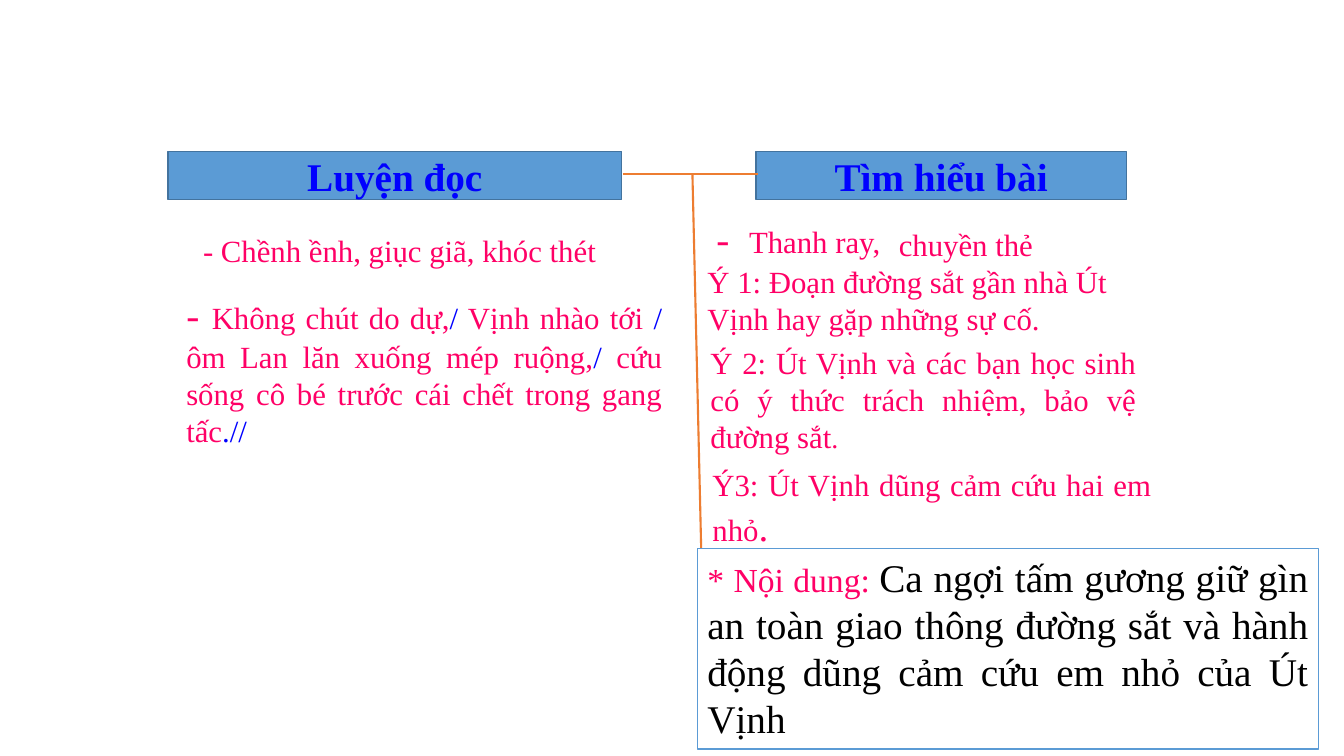
from lxml import etree
from pptx import Presentation
from pptx.dml.color import RGBColor
from pptx.enum.shapes import MSO_CONNECTOR, MSO_SHAPE
from pptx.enum.text import MSO_ANCHOR, MSO_AUTO_SIZE, PP_ALIGN
from pptx.oxml.ns import qn
from pptx.util import Pt

LEFT, CENTER, JUST = PP_ALIGN.LEFT, PP_ALIGN.CENTER, PP_ALIGN.JUSTIFY
TOP, MIDDLE = MSO_ANCHOR.TOP, MSO_ANCHOR.MIDDLE
FIXED = MSO_AUTO_SIZE.NONE
RECT, LINE = MSO_SHAPE.RECTANGLE, MSO_CONNECTOR.STRAIGHT

PINK, BLUE, BLACK, WHITE = "FF0066", "0000FF", "000000", "FFFFFF"
SKY, NAVY, ORANGE = "5B9BD5", "43739E", "ED7D31"


def color(code):
    return RGBColor.from_string(code)


class Board:
    font = "Times New Roman"
    small, large = 22, 28

    def __init__(self, slide):
        self.slide = slide

    def paint(self, shape, fill, edge):
        shape.fill.solid()
        shape.fill.fore_color.rgb = color(fill)
        shape.line.color.rgb = color(edge)
        shape.line.width = Pt(1)

    def style(self, run, size, ink, bold=False):
        run.font.name = self.font
        run.font.size = Pt(size)
        run.font.color.rgb = color(ink)
        run.font.bold = bold

    def label(self, shape, parts, align):
        """Each part is (text, size, ink)."""
        frame = shape.text_frame
        frame.word_wrap = True
        frame.auto_size = FIXED
        frame.vertical_anchor = TOP
        para = frame.paragraphs[0]
        para.alignment = align
        for text, size, ink in parts:
            run = para.add_run()
            run.text = text
            self.style(run, size, ink)
        return para

    def head(self, idx, text, left, width):
        shape = self.slide.placeholders[idx]
        shape.left, shape.top = Pt(left), Pt(108)
        shape.width, shape.height = Pt(width), Pt(34.6)
        self.paint(shape, SKY, NAVY)
        frame = shape.text_frame
        frame.text = text
        frame.auto_size = FIXED
        frame.vertical_anchor = MIDDLE
        para = frame.paragraphs[0]
        para.alignment = CENTER
        para.space_before = Pt(0)
        para.line_spacing = 1.0
        self.style(para.runs[0], self.large, BLUE, True)

    def note(self, box, parts, align=JUST):
        shape = self.slide.shapes.add_textbox(*map(Pt, box))
        return self.label(shape, parts, align)

    def panel(self, box, parts):
        shape = self.slide.shapes.add_shape(RECT, *map(Pt, box))
        shape.shadow.inherit = False
        self.paint(shape, WHITE, SKY)
        self.label(shape, parts, JUST)

    def rule(self, *ends):
        line = self.slide.shapes.add_connector(LINE, *map(Pt, ends))
        line.line.color.rgb = color(ORANGE)
        line.line.width = Pt(1.5)
        etree.SubElement(line._element.spPr, qn("a:effectLst"))

    def tab(self, para, stop):
        tabs = etree.SubElement(para._p.get_or_add_pPr(), qn("a:tabLst"))
        etree.SubElement(tabs, qn("a:tab"), pos=str(Pt(stop)), algn="l")

    def prune(self):
        for shape in list(self.slide.placeholders):
            if not shape.text_frame.text:
                shape._element.getparent().remove(shape._element)


def main():
    deck = Presentation()
    deck.slide_width, deck.slide_height = Pt(960), Pt(540)
    board = Board(deck.slides.add_slide(deck.slide_layouts[4]))
    small, large = board.small, board.large

    # Column headings
    board.head(1, "Luyện đọc", 120, 324)
    board.head(3, "Tìm hiểu bài", 540, 264.5)
    board.prune()

    # Divider
    board.rule(494.6, 124, 501.8, 432)
    board.rule(445, 124, 541.5, 124)

    # Reading practice
    board.note((138, 162, 307.5, 33.8),
               [("- Chềnh ềnh, giục giã, khóc thét", small, PINK)])
    pauses = [
        ("Không chút do dự,", PINK), ("/", BLUE),
        (" Vịnh nhào tới ", PINK), ("/", BLUE),
        (" ôm Lan lăn xuống mép ruộng,", PINK), ("/", BLUE),
        (" cứu sống cô bé trước cái chết trong gang tấc", PINK),
        (".//", BLUE),
    ]
    board.note((126, 204, 354, 121),
               [("- ", large, PINK)]
               + [(text, small, ink) for text, ink in pauses])

    # Understanding the text
    words = board.note((504.7, 149.8, 134.6, 41),
                       [("-\t", large, PINK), ("Thanh ray,", small, PINK)])
    board.tab(words, 23.3)
    board.note((635, 157.7, 138, 33.8), [("chuyền thẻ", small, PINK)])
    board.note((498.2, 184.3, 306, 60.5),
               [("Ý 1: Đoạn đường sắt gần nhà Út Vịnh hay gặp "
                 "những sự cố.", small, PINK)], LEFT)
    board.note((500.4, 242, 318.2, 87),
               [("Ý 2: Út Vịnh và các bạn học sinh có ý thức trách nhiệm, "
                 "bảo vệ đường sắt", small, PINK), (".", 20, PINK)])
    board.note((501.8, 329, 327.6, 67.7),
               [("Ý3: Út Vịnh dũng cảm cứu hai em nhỏ", small, PINK),
                (".", large, PINK)])

    # Main idea
    board.panel((498.2, 391.7, 443.5, 143.3),
                [("* Nội dung: ", 24, PINK),
                 ("Ca ngợi tấm gương giữ gìn an toàn giao thông đường sắt "
                  "và hành động dũng cảm cứu em nhỏ của Út Vịnh",
                  large, BLACK)])

    deck.save("out.pptx")


if __name__ == "__main__":
    main()
